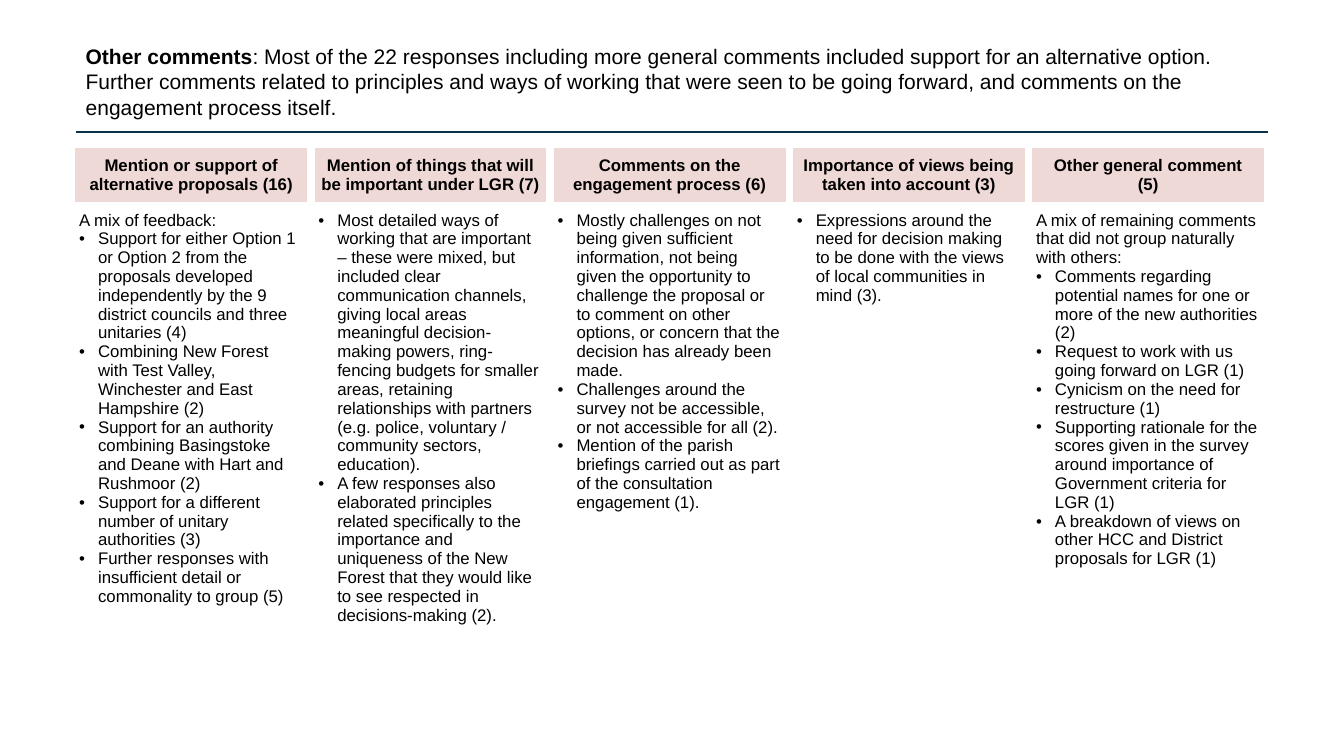
from lxml import etree
from pptx import Presentation
from pptx.dml.color import RGBColor
from pptx.enum import shapes, text
from pptx.oxml import ns
from pptx.util import Pt

COLOURS = {"text": "000000", "rule": "08324B", "header": "EFD9D7", "white": "FFFFFF"}

TITLE = [
    ("Other comments", True),
    (": Most of the 22 responses including more general comments included support for an "
     "alternative option. Further comments related to principles and ways of working that were "
     "seen to be going forward, and comments on the engagement process itself.", False),
]

# Each theme: header lines, introduction (may be empty), bullet points
THEMES = [
    (["Mention or support of alternative proposals (16)"], "A mix of feedback:", [
        "Support for either Option 1 or Option 2 from the proposals developed independently by "
        "the 9 district councils and three unitaries (4)",
        "Combining New Forest with Test Valley, Winchester and East Hampshire (2)",
        "Support for an authority combining Basingstoke and Deane with Hart and Rushmoor (2)",
        "Support for a different number of unitary authorities (3)",
        "Further responses with insufficient detail or commonality to group (5)",
    ]),
    (["Mention of things that will be important under LGR (7)"], "", [
        "Most detailed ways of working that are important – these were mixed, but included clear "
        "communication channels, giving local areas meaningful decision-making powers, "
        "ring-fencing budgets for smaller areas, retaining relationships with partners (e.g. "
        "police, voluntary / community sectors, education).",
        "A few responses also elaborated principles related specifically to the importance and "
        "uniqueness of the New Forest that they would like to see respected in "
        "decisions-making (2).",
    ]),
    (["Comments on the engagement process (6)"], "", [
        "Mostly challenges on not being given sufficient information, not being given the "
        "opportunity to challenge the proposal or to comment on other options, or concern that "
        "the decision has already been made.",
        "Challenges around the survey not be accessible, or not accessible for all (2).",
        "Mention of the parish briefings carried out as part of the consultation engagement (1).",
    ]),
    (["Importance of views being taken into account (3)"], "", [
        "Expressions around the need for decision making to be done with the views of local "
        "communities in mind (3).",
    ]),
    (["Other general comment", "(5)"],
     "A mix of remaining comments that did not group naturally with others:", [
        "Comments regarding potential names for one or more of the new authorities (2)",
        "Request to work with us going forward on LGR (1)",
        "Cynicism on the need for restructure (1)",
        "Supporting rationale for the scores given in the survey around importance of Government "
        "criteria for LGR (1)",
        "A breakdown of views on other HCC and District proposals for LGR (1)",
    ]),
]


def colour(name):
    return RGBColor.from_string(COLOURS[name])


class SlideBuilder:
    font_name = "Arial"
    body_size = 12
    title_size = 15

    def __init__(self, page):
        self.page = page

    def style(self, font, size, bold=None):
        font.name, font.size, font.bold = self.font_name, Pt(size), bold
        font.color.rgb = colour("text")

    def title(self, spans, left, top, width, height):
        box = self.page.shapes.title
        box.left, box.top, box.width, box.height = Pt(left), Pt(top), Pt(width), Pt(height)
        frame = box.text_frame
        frame.word_wrap = True
        frame.auto_size = text.MSO_AUTO_SIZE.NONE
        frame.vertical_anchor = text.MSO_ANCHOR.BOTTOM
        para = frame.paragraphs[0]
        para.alignment = text.PP_ALIGN.LEFT
        self.style(para.font, self.title_size)
        for words, bold in spans:
            span = para.add_run()
            span.text = words
            self.style(span.font, self.title_size, bold)

    def rule(self, left, right, y):
        line = self.page.shapes.add_connector(
            shapes.MSO_CONNECTOR.STRAIGHT, Pt(left), Pt(y), Pt(right), Pt(y))
        line.line.color.rgb = colour("rule")
        line.line.width = Pt(1.25)
        etree.SubElement(line._element.spPr, ns.qn("a:effectLst"))

    def table(self, themes, left, top, width, header_height, body_height):
        grid = self.page.shapes.add_table(
            2, len(themes), Pt(left), Pt(top), Pt(width), Pt(header_height + body_height)).table
        grid.rows[0].height, grid.rows[1].height = Pt(header_height), Pt(body_height)
        for column, (header, intro, points) in enumerate(themes):
            grid.columns[column].width = Pt(width / len(themes))
            self.cell(grid.cell(0, column), "header", header, bold=True)
            self.cell(grid.cell(1, column), "white", [intro] if intro else [], points)

    def cell(self, cell, fill, lines, points=(), bold=False):
        """Fill one cell with plain lines followed by bullet points."""
        cell.fill.solid()
        cell.fill.fore_color.rgb = colour(fill)
        cell.margin_left = cell.margin_right = Pt(5.4)
        cell.margin_top = cell.margin_bottom = Pt(3.6)
        cell.vertical_anchor = text.MSO_ANCHOR.MIDDLE if bold else text.MSO_ANCHOR.TOP
        self.borders(cell)
        frame = cell.text_frame
        for index, words in enumerate([*lines, *points]):
            para = frame.add_paragraph() if index else frame.paragraphs[0]
            para.text = words
            para.alignment = text.PP_ALIGN.CENTER if bold else text.PP_ALIGN.LEFT
            if index >= len(lines):
                self.bullet(para)
            self.style(para.font, self.body_size, bold)

    def bullet(self, para):
        properties = para._p.get_or_add_pPr()
        properties.set("marL", str(Pt(13.5)))
        properties.set("indent", str(-Pt(13.5)))
        etree.SubElement(properties, ns.qn("a:buFont"), typeface=self.font_name)
        etree.SubElement(properties, ns.qn("a:buChar"), char="•")

    def borders(self, cell):
        properties = cell._tc.get_or_add_tcPr()
        for index, side in enumerate(("lnL", "lnR", "lnT", "lnB")):
            edge = etree.Element(ns.qn(f"a:{side}"), w=str(Pt(6)))
            fill = etree.SubElement(edge, ns.qn("a:solidFill"))
            etree.SubElement(fill, ns.qn("a:srgbClr"), val=COLOURS["white"])
            properties.insert(index, edge)


def main():
    deck = Presentation()
    deck.slide_width, deck.slide_height = Pt(960), Pt(540)
    builder = SlideBuilder(deck.slides.add_slide(deck.slide_layouts[5]))
    builder.rule(54, 906, 94.4)
    builder.title(TITLE, 54, 28.8, 852, 60)
    builder.table(THEMES, 51.2, 103, 854.5, 44, 295)
    deck.save("out.pptx")


if __name__ == "__main__":
    main()
